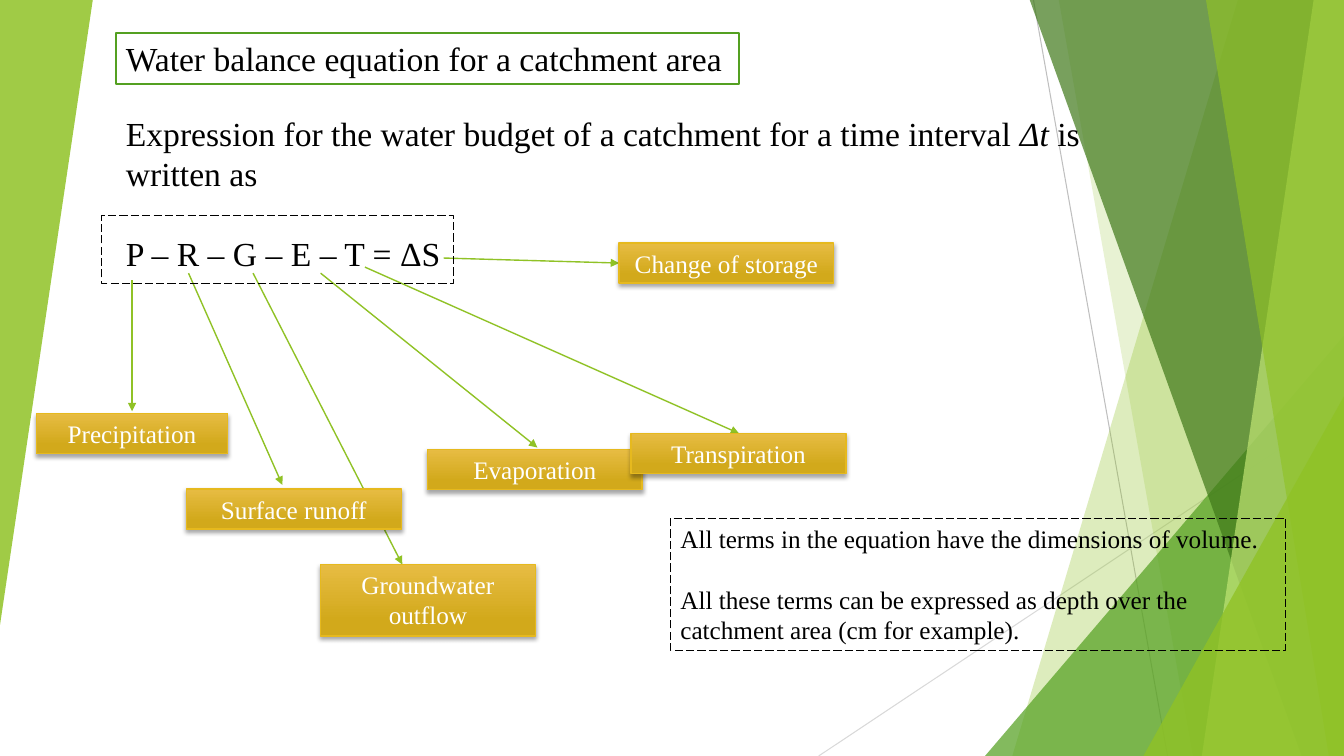
from dataclasses import dataclass

from lxml.etree import SubElement
from pptx import Presentation
from pptx.dml.color import RGBColor
from pptx.enum.dml import MSO_LINE
from pptx.enum.shapes import MSO_CONNECTOR, MSO_SHAPE
from pptx.enum.text import MSO_ANCHOR, PP_ALIGN
from pptx.oxml.ns import qn
from pptx.util import Emu, Pt

PX = 9144  # 100 px to the inch
WIDTH, HEIGHT = 1333, 750


@dataclass(frozen=True)
class Theme:
    font: str = "Times New Roman"
    large: int = 24
    small: int = 18
    ink: str = "000000"
    paper: str = "FFFFFF"
    lime: str = "90C226"
    pale_lime: str = "C0E474"
    green: str = "54A021"
    dark_green: str = "3F7819"
    gold_top: str = "E7BC43"
    gold_bottom: str = "D2A91B"
    gold_edge: str = "E6B91E"
    grey: str = "BFBFBF"
    light_grey: str = "D9D9D9"


THEME = Theme()


def px(*lengths):
    return [Emu(length * PX) for length in lengths]


def rgb(color):
    return RGBColor.from_string(color)


def set_opacity(color_element, percent):
    SubElement(color_element, qn("a:alpha"), val=str(percent * 1000))


class SlideBuilder:
    def __init__(self, slide, theme):
        self.slide = slide
        self.shapes = slide.shapes
        self.theme = theme

    def line(self, start, end, color, width=0.75, arrow=False):
        connector = self.shapes.add_connector(MSO_CONNECTOR.STRAIGHT, *px(*start, *end))
        connector.line.color.rgb = rgb(color)
        connector.line.width = Pt(width)
        properties = connector.element.spPr
        if arrow:
            SubElement(properties.find(qn("a:ln")), qn("a:tailEnd"), type="triangle")
        SubElement(properties, qn("a:effectLst"))

    def tint(self, shape, color, opacity):
        """Give a decorative shape a see-through fill and no outline."""
        shape.shadow.inherit = False
        shape.fill.solid()
        shape.fill.fore_color.rgb = rgb(color)
        shape.line.fill.background()
        for color_element in shape.element.spPr.iter(qn("a:srgbClr")):
            set_opacity(color_element, opacity)

    def band(self, top_x, bottom_x, color, opacity):
        """Fill from a slanted left edge to the right side of the slide."""
        outline = self.shapes.build_freeform(top_x, -1, scale=PX)
        outline.add_line_segments([(WIDTH, -1), (WIDTH, HEIGHT), (bottom_x, HEIGHT)])
        self.tint(outline.convert_to_shape(), color, opacity)

    def corner(self, box, color, opacity, rotation=0):
        triangle = self.shapes.add_shape(MSO_SHAPE.ISOSCELES_TRIANGLE, *px(*box))
        triangle.adjustments[0] = 1
        triangle.rotation = rotation
        self.tint(triangle, color, opacity)

    def fill_text(self, shape, paragraphs, size, color, align=PP_ALIGN.LEFT, gap=0):
        """Fill a shape with paragraphs, each a list of (text, italic) runs."""
        frame = shape.text_frame
        frame.word_wrap = True
        for index, runs in enumerate(paragraphs):
            paragraph = frame.add_paragraph() if index else frame.paragraphs[0]
            paragraph.alignment = align
            if index:
                paragraph.space_before = Pt(gap)
            paragraph.font.name = self.theme.font
            paragraph.font.size = Pt(size)
            paragraph.font.color.rgb = rgb(color)
            for text, italic in runs:
                run = paragraph.add_run()
                run.text = text
                if italic:
                    run.font.italic = True

    def text(self, box, paragraphs, size, gap):
        text_box = self.shapes.add_textbox(*px(*box))
        self.fill_text(text_box, paragraphs, size, self.theme.ink, gap=gap)

    def frame(self, box, color, width, fill=None, dashed=False):
        rectangle = self.shapes.add_shape(MSO_SHAPE.RECTANGLE, *px(*box))
        rectangle.shadow.inherit = False
        if fill:
            rectangle.fill.solid()
            rectangle.fill.fore_color.rgb = rgb(fill)
        else:
            rectangle.fill.background()
        rectangle.line.color.rgb = rgb(color)
        rectangle.line.width = Pt(width)
        if dashed:
            rectangle.line.dash_style = MSO_LINE.LONG_DASH
        rectangle.text_frame.vertical_anchor = MSO_ANCHOR.TOP
        return rectangle

    def label(self, text, box):
        theme = self.theme
        label = self.frame(box, theme.gold_edge, 1)
        label.fill.gradient()
        label.fill.gradient_angle = 270
        stops = ((0, theme.gold_top), (0.78, theme.gold_bottom))
        for stop, (position, color) in zip(label.fill.gradient_stops, stops):
            stop.position = position
            stop.color.rgb = rgb(color)
        effects = label.element.spPr.find(qn("a:effectLst"))
        shadow = SubElement(effects, qn("a:outerShdw"), blurRad=str(Pt(3)),
                            dist=str(Pt(2)), dir="5400000", rotWithShape="0")
        set_opacity(SubElement(shadow, qn("a:srgbClr"), val=theme.ink), 35)
        self.fill_text(label, [[(text, False)]], theme.small, theme.paper, PP_ALIGN.CENTER)


def draw_background(builder):
    theme = builder.theme
    builder.line((1025, 0), (1158, HEIGHT), theme.grey)
    builder.line((WIDTH, 403), (812, HEIGHT), theme.light_grey)
    builder.band(1228, 1004, theme.lime, 30)
    builder.band(1050, 1183, theme.lime, 20)
    builder.corner((977, 333, 356, 417), theme.green, 72)
    builder.band(1021, 1291, theme.dark_green, 70)
    builder.band(1303, 1192, theme.pale_lime, 70)
    builder.band(1196, 1318, theme.lime, 65)
    builder.corner((1134, 393, 199, 357), theme.lime, 80)
    builder.corner((0, 0, 92, 620), theme.lime, 85, rotation=180)


def draw_equation(builder):
    theme = builder.theme
    # Label, its box, and the arrow from its term in the equation
    terms = [
        ("Precipitation", (36, 410, 190, 40), (131, 278), (131, 408)),
        ("Surface runoff", (185, 485, 213, 40), (187, 271), (280, 481)),
        ("Groundwater outflow", (318, 560, 213, 71), (251, 271), (399, 560)),
        ("Evaporation", (424, 446, 213, 40), (318, 271), (533, 444)),
        ("Transpiration", (626, 430, 213, 40), (362, 265), (733, 430)),
        ("Change of storage", (614, 241, 213, 40), (440, 256), (614, 261)),
    ]
    for _, _, start, end in terms:
        builder.line(start, end, theme.lime, 1, arrow=True)

    title = builder.frame((115, 33, 618, 50), theme.green, 1.5, fill=theme.paper)
    builder.fill_text(title, [[("Water balance equation for a catchment area", False)]],
                      theme.large, theme.ink)
    builder.text((115, 107, 989, 172), [
        [("Expression for the water budget of a catchment for a time interval ", False),
         ("Δt", True), (" is written as", False)],
        [("P – R – G – E – T = ΔS", False)],
    ], theme.large, gap=28)

    for text, box, _, _ in terms:
        builder.label(text, box)

    builder.frame((101, 214, 349, 67), theme.ink, 0.75, dashed=True)
    note = builder.frame((665, 514, 610, 131), theme.ink, 0.75, dashed=True)
    builder.fill_text(note, [
        [("All terms in the equation have the dimensions of volume.", False)],
        [("All these terms can be expressed as depth over the catchment area "
          "(cm for example).", False)],
    ], theme.small, theme.ink, gap=22)


def main():
    presentation = Presentation()
    presentation.slide_width, presentation.slide_height = px(WIDTH, HEIGHT)
    slide = presentation.slides.add_slide(presentation.slide_layouts[6])
    builder = SlideBuilder(slide, THEME)
    draw_background(builder)
    draw_equation(builder)
    presentation.save("out.pptx")


if __name__ == "__main__":
    main()
